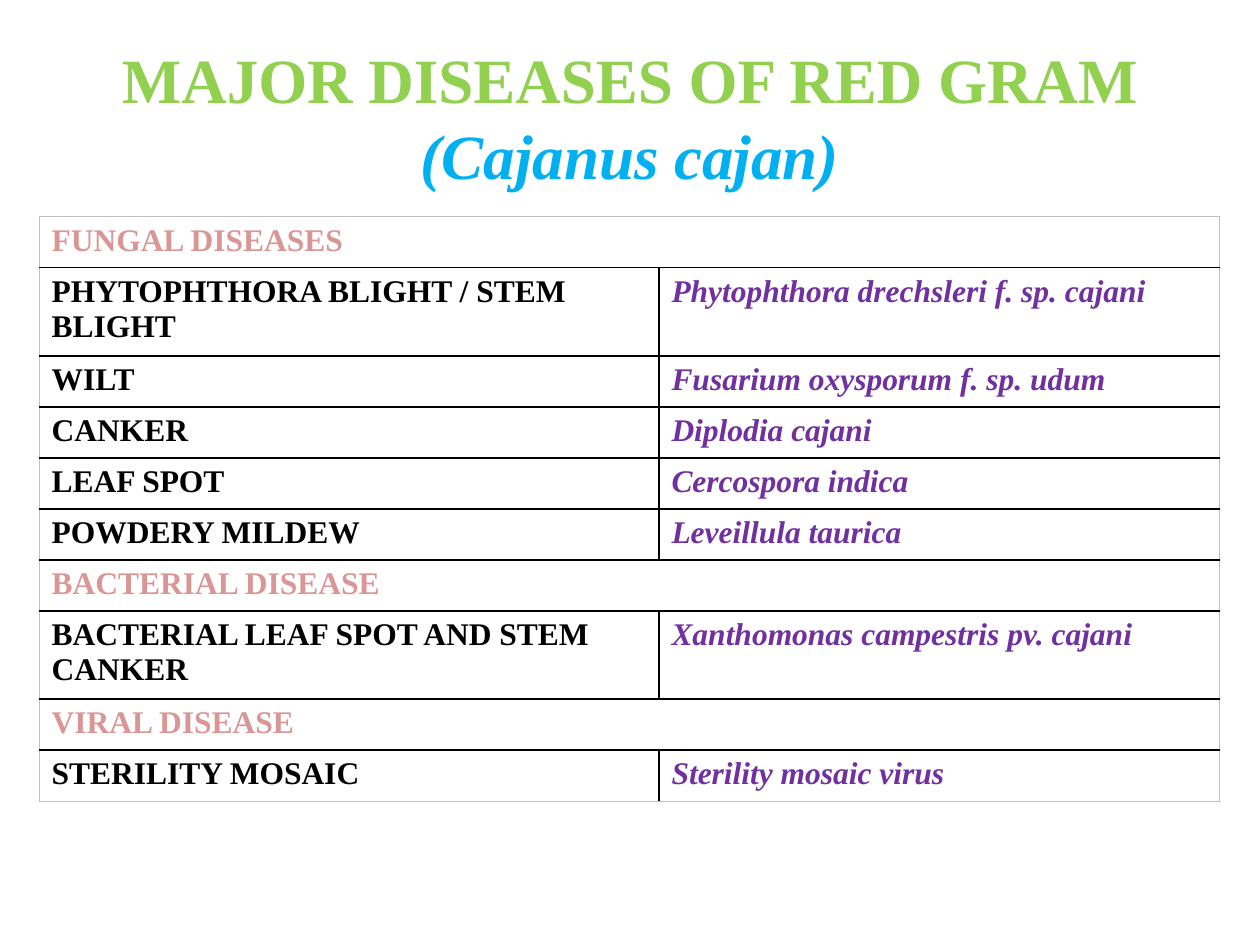
from lxml import etree
from pptx import Presentation
from pptx.dml.color import RGBColor
from pptx.enum.text import MSO_ANCHOR, PP_ALIGN
from pptx.oxml.ns import qn
from pptx.util import Inches, Pt

MIDDLE = MSO_ANCHOR.MIDDLE
CENTER = PP_ALIGN.CENTER
FONT = "Times New Roman"
GREEN = RGBColor(0x92, 0xD0, 0x50)
BLUE = RGBColor(0x00, 0xB0, 0xF0)
ROSE = RGBColor(0xD9, 0x96, 0x94)
PURPLE = RGBColor(0x70, 0x30, 0xA0)
BLACK = RGBColor(0x00, 0x00, 0x00)
GRAY = RGBColor(0xBF, 0xBF, 0xBF)

TABLE_LEFT, TABLE_TOP, TABLE_HEIGHT = 0.31, 1.72, 4.64
COLUMN_WIDTHS = (4.92, 4.45)
TALL_ROW = 0.7
TALL_NAMES = ("PHYTOPHTHORA BLIGHT / STEM BLIGHT", "BACTERIAL LEAF SPOT AND STEM CANKER")
DISEASES = {
    "FUNGAL DISEASES": [
        (TALL_NAMES[0], "Phytophthora drechsleri f. sp. cajani"),
        ("WILT", "Fusarium oxysporum f. sp. udum"),
        ("CANKER", "Diplodia cajani"),
        ("LEAF SPOT", "Cercospora indica"),
        ("POWDERY MILDEW", "Leveillula taurica"),
    ],
    "BACTERIAL DISEASE": [(TALL_NAMES[1], "Xanthomonas campestris pv. cajani")],
    "VIRAL DISEASE": [("STERILITY MOSAIC", "Sterility mosaic virus")],
}


def add_span(para, text, size, color, italic=False):
    """Add a bold run in the slide's font."""
    span = para.add_run()
    span.text = text
    font_format = {"name": FONT, "size": Pt(size), "bold": True, "italic": italic}
    for name, value in font_format.items():
        setattr(span.font, name, value)
    span.font.color.rgb = color


def add_title(page):
    """Place the title and fill it with its two runs."""
    title = page.shapes.title
    place = {"left": 0.5, "top": 0.3, "width": 9, "height": 1.25}
    for name, value in place.items():
        setattr(title, name, Inches(value))
    title.text_frame.vertical_anchor = MIDDLE
    para = title.text_frame.paragraphs[0]
    para.alignment = CENTER
    add_span(para, "MAJOR DISEASES OF RED GRAM ", 36, GREEN)
    add_span(para, "(Cajanus cajan)", 36, BLUE, italic=True)


def set_borders(cell, outer_sides):
    """Draw black inner lines and fine gray lines on the outer sides."""
    properties = cell._tc.get_or_add_tcPr()
    for index, side in enumerate(("lnL", "lnR", "lnT", "lnB")):
        color, width = (GRAY, Pt(0.5)) if side in outer_sides else (BLACK, Pt(1))
        line = etree.Element(qn("a:" + side), w=str(width))
        fill = etree.SubElement(line, qn("a:solidFill"))
        etree.SubElement(fill, qn("a:srgbClr"), val=str(color))
        properties.insert(index, line)


def add_disease_table(page):
    """Add the table of diseases and pathogens, grouped by section."""
    rows = []
    for section, entries in DISEASES.items():
        rows += [(section,), *entries]
    table = page.shapes.add_table(
        len(rows), len(COLUMN_WIDTHS), Inches(TABLE_LEFT), Inches(TABLE_TOP),
        Inches(sum(COLUMN_WIDTHS)), Inches(TABLE_HEIGHT)).table
    table.first_row = table.horz_banding = False
    for column, width in zip(table.columns, COLUMN_WIDTHS):
        column.width = Inches(width)
    tall_count = len(TALL_NAMES)
    short_row = (TABLE_HEIGHT - tall_count * TALL_ROW) / (len(rows) - tall_count)

    for row_index, texts in enumerate(rows):
        is_section = len(texts) == 1
        height = TALL_ROW if texts[0] in TALL_NAMES else short_row
        table.rows[row_index].height = Inches(height)
        if is_section:
            table.cell(row_index, 0).merge(table.cell(row_index, 1))
        styles = [(ROSE, False)] if is_section else [(BLACK, False), (PURPLE, True)]
        for column_index, (text, (color, italic)) in enumerate(zip(texts, styles)):
            para = table.cell(row_index, column_index).text_frame.paragraphs[0]
            add_span(para, text, 18, color, italic)
        for column_index in range(len(COLUMN_WIDTHS)):
            cell = table.cell(row_index, column_index)
            cell.fill.background()
            edges = {
                "lnL": column_index == 0,
                "lnR": column_index == 1 or is_section,
                "lnT": row_index == 0,
                "lnB": row_index == len(rows) - 1,
            }
            set_borders(cell, [side for side, outer in edges.items() if outer])


def main():
    """Build the deck and save it."""
    deck = Presentation()
    deck.slide_width, deck.slide_height = Inches(10), Inches(7.5)
    page = deck.slides.add_slide(deck.slide_layouts[5])
    add_title(page)
    add_disease_table(page)
    deck.save("out.pptx")


if __name__ == "__main__":
    main()
